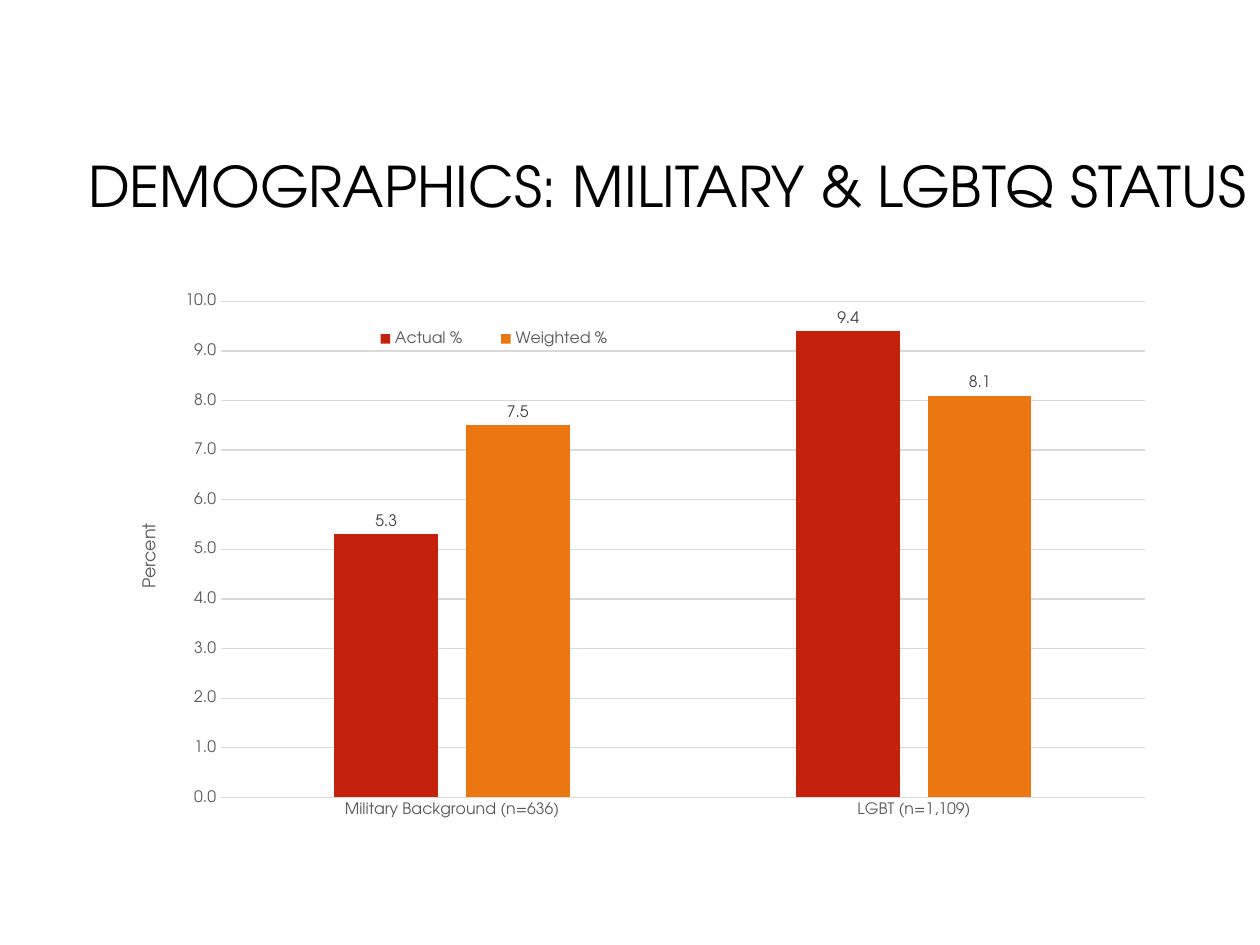
from dataclasses import dataclass

from lxml import etree
from pptx import Presentation
from pptx.chart.data import CategoryChartData
from pptx.dml.color import RGBColor
from pptx.enum.chart import XL_CHART_TYPE, XL_LABEL_POSITION, XL_LEGEND_POSITION, XL_TICK_MARK
from pptx.enum.text import MSO_ANCHOR, PP_ALIGN
from pptx.oxml.ns import qn
from pptx.util import Emu, Pt

COLUMN = XL_CHART_TYPE.COLUMN_CLUSTERED
OUTSIDE = XL_LABEL_POSITION.OUTSIDE_END
BOTTOM = XL_LEGEND_POSITION.BOTTOM
NO_TICK = XL_TICK_MARK.NONE
MIDDLE = MSO_ANCHOR.MIDDLE
RIGHT = PP_ALIGN.RIGHT

TITLE = "DEMOGRAPHICS: MILITARY & LGBTQ STATUS"
GROUPS = ["Military Background (n=636)", "LGBT (n=1,109)"]
RATES = {"Actual %": (5.3, 9.4), "Weighted %": (7.5, 8.1)}


@dataclass(frozen=True)
class Theme:
    """Hold the colours, type face and type sizes."""
    face: str = "TeX Gyre Adventor"
    ink: str = "000000"
    gray: str = "595959"
    dark: str = "404040"
    grid: str = "D9D9D9"
    bars: tuple = ("C4220D", "EB7712")
    head: int = 32
    name: int = 10
    small: int = 9


THEME = Theme()


def px(count):
    """Turn pixels into EMU."""
    return Emu(round(count * 914400 / 126))


def style(font, size, color):
    """Set the face, size and colour of a font."""
    font.name = THEME.face
    font.size = Pt(size)
    font.bold = False
    font.color.rgb = RGBColor.from_string(color)


def rule(line):
    """Draw a line as a thin grid rule."""
    line.color.rgb = RGBColor.from_string(THEME.grid)
    line.width = Pt(0.75)


def place(node, index, inner=False, **spots):
    """Give a chart part a manual layout in fractions of the chart."""
    for old in node.findall(qn("c:layout")):
        node.remove(old)
    layout = etree.Element(qn("c:layout"))
    manual = etree.SubElement(layout, qn("c:manualLayout"))
    if inner:
        etree.SubElement(manual, qn("c:layoutTarget")).set("val", "inner")
    for key in ("x", "y"):
        etree.SubElement(manual, qn(f"c:{key}Mode")).set("val", "edge")
    for key, value in spots.items():
        etree.SubElement(manual, qn(f"c:{key}")).set("val", str(value))
    node.insert(index, layout)


def add_title(slide):
    """Fill and format the title placeholder."""
    title = slide.shapes.title
    title.left, title.top, title.width, title.height = px(0), px(147), px(1260), px(84)
    frame = title.text_frame
    frame.text = TITLE
    frame.word_wrap = True
    frame.vertical_anchor = MIDDLE
    line = frame.paragraphs[0]
    line.alignment = RIGHT
    line.line_spacing = 0.9
    style(line.runs[0].font, THEME.head, THEME.ink)


def format_axes(chart):
    """Format both axes, the grid and the axis title."""
    for axis in (chart.category_axis, chart.value_axis):
        axis.major_tick_mark = axis.minor_tick_mark = NO_TICK
        style(axis.tick_labels.font, THEME.small, THEME.gray)
    rule(chart.category_axis.format.line)
    axis = chart.value_axis
    axis.minimum_scale, axis.maximum_scale, axis.major_unit = 0, 10, 1
    axis.format.line.fill.background()
    axis.has_major_gridlines = True
    rule(axis.major_gridlines.format.line)
    axis.tick_labels.number_format = "#,##0.0"
    axis.tick_labels.number_format_is_linked = False
    frame = axis.axis_title.text_frame
    frame.text = "Percent"
    style(frame.paragraphs[0].runs[0].font, THEME.name, THEME.gray)
    place(axis.axis_title._element, 1, x=0.02, y=0.41)


def format_bars(plot):
    """Colour the bars and label their values."""
    plot.gap_width, plot.overlap = 219, -27
    plot.vary_by_categories = False
    for series, color in zip(plot.series, THEME.bars):
        series.format.fill.solid()
        series.format.fill.fore_color.rgb = RGBColor.from_string(color)
        labels = series.data_labels
        labels.show_value = True
        labels.position = OUTSIDE
        style(labels.font, THEME.small, THEME.dark)


def add_legend(chart):
    """Set the legend inside the plot."""
    chart.has_legend = True
    legend = chart.legend
    legend.position = BOTTOM
    legend.include_in_layout = False
    style(legend.font, THEME.small, THEME.gray)
    place(legend._element, 1, x=0.22, y=0.07, w=0.28, h=0.05)


def add_columns(slide):
    """Add the column chart."""
    data = CategoryChartData(number_format="0.0")
    data.categories = GROUPS
    for name, values in RATES.items():
        data.add_series(name, values)
    frame = slide.shapes.add_chart(COLUMN, px(116), px(284), px(1050), px(577), data)
    chart = frame.chart
    chart.has_title = False
    style(chart.font, THEME.name, THEME.ink)
    format_axes(chart)
    format_bars(chart.plots[0])
    add_legend(chart)
    area = chart._chartSpace.find(".//" + qn("c:plotArea"))
    place(area, 0, inner=True, x=0.1, y=0.03, w=0.88, h=0.86)


def main():
    """Build and save the slide."""
    deck = Presentation()
    deck.slide_width, deck.slide_height = px(1260), px(945)
    slide = deck.slides.add_slide(deck.slide_layouts[5])
    add_title(slide)
    add_columns(slide)
    deck.save("out.pptx")


if __name__ == "__main__":
    main()
